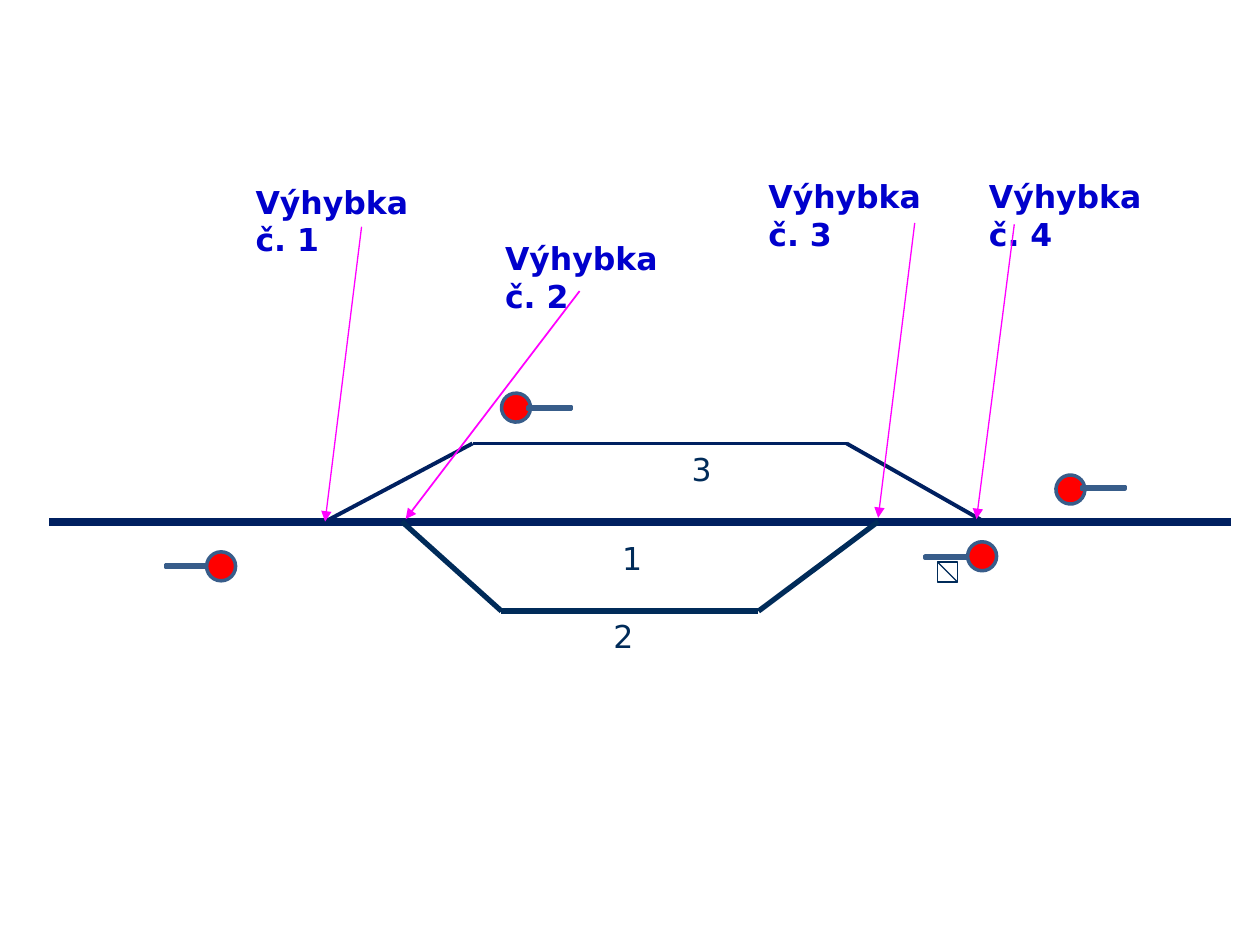
from itertools import pairwise

from lxml import etree
from pptx import Presentation
from pptx.dml.color import RGBColor
from pptx.enum.shapes import MSO_CONNECTOR, MSO_SHAPE
from pptx.enum.text import MSO_ANCHOR
from pptx.oxml.ns import qn
from pptx.util import Inches, Pt

STRAIGHT = MSO_CONNECTOR.STRAIGHT
LAMP = MSO_SHAPE.FLOWCHART_CONNECTOR
MAST = MSO_SHAPE.MATH_MINUS
SQUARE = MSO_SHAPE.RECTANGLE
TOP = MSO_ANCHOR.TOP

NAVY = RGBColor(0x00, 0x20, 0x60)
INK = RGBColor(0x00, 0x2B, 0x59)
LABEL_BLUE = RGBColor(0x00, 0x00, 0xCC)
MAGENTA = RGBColor(0xFF, 0x00, 0xFF)
RED = RGBColor(0xFF, 0x00, 0x00)
STEEL = RGBColor(0x4F, 0x81, 0xBD)
OUTLINE = RGBColor(0x38, 0x5D, 0x8A)
WHITE = RGBColor(0xFF, 0xFF, 0xFF)

SWITCH_FONT = {"name": "DejaVu Sans", "size": Pt(18), "bold": True}
TRACK_FONT = {"name": "DejaVu Sans", "size": Pt(18), "bold": False}


def add_line(slide, start, end, color, weight, arrow=False):
    line = slide.shapes.add_connector(
        STRAIGHT, *(Inches(value) for value in (*start, *end)))
    line.line.color.rgb = color
    line.line.width = Pt(weight)
    if arrow:
        outline = line.line._get_or_add_ln()
        etree.SubElement(outline, qn("a:tailEnd"), type="triangle")
    etree.SubElement(line._element.spPr, qn("a:effectLst"))


def add_figure(slide, kind, box, fill, outline, weight, rotation=0):
    figure = slide.shapes.add_shape(kind, *(Inches(value) for value in box))
    figure.shadow.inherit = False
    figure.fill.solid()
    figure.fill.fore_color.rgb = fill
    figure.line.color.rgb = outline
    figure.line.width = Pt(weight)
    figure.rotation = rotation


def add_label(slide, box, lines, font_format, color):
    label = slide.shapes.add_textbox(*(Inches(value) for value in box))
    frame = label.text_frame
    frame.word_wrap = True
    frame.vertical_anchor = TOP
    frame.text = "\n".join(lines)
    for paragraph in frame.paragraphs:
        for key, value in font_format.items():
            setattr(paragraph.font, key, value)
        paragraph.font.color.rgb = color


def add_track(slide, left, top, points, color, weight):
    """Chain of straight sections; points are relative to left and top."""
    placed = [(left + x, top + y) for x, y in points]
    for start, end in pairwise(placed):
        add_line(slide, start, end, color, weight)


def add_signal(slide, left, top, mast_dx, mast_dy, rotation=0):
    """Lamp at left and top, with its mast offset from there."""
    parts = [
        (MAST, (left + mast_dx, top + mast_dy, 0.47, 0.08), STEEL, OUTLINE, 2),
        (LAMP, (left, top, 0.23, 0.23), RED, OUTLINE, 2, rotation),
    ]
    if mast_dx > 0:  # a mast on the right lies over its lamp
        parts.reverse()
    for part in parts:
        add_figure(slide, *part)


def add_crossed_square(slide, left, top, side):
    add_figure(slide, SQUARE, (left, top, side, side), WHITE, INK, 0.75)
    add_line(slide, (left + side, top + side), (left, top), INK, 0.75)


def add_switch(slide, left, top, width, lines, arrow_from, arrow_to, weight):
    """Switch label; arrow ends are relative to its left and top."""
    add_label(slide, (left, top, width, 0.4), lines, SWITCH_FONT, LABEL_BLUE)
    start, end = [(left + x, top + y) for x, y in (arrow_from, arrow_to)]
    add_line(slide, start, end, MAGENTA, weight, arrow=True)


def add_station(slide, left, top):
    """Tracks and their numbers; the main track starts at left and top."""
    # Main track 1 and upper loop 3
    add_track(slide, left, top, [(0, 0), (9.38, 0)], NAVY, 4.5)
    add_track(slide, left, top,
              [(2.19, 0), (3.36, -0.62), (6.33, -0.62), (7.42, 0)], NAVY, 2.25)
    # Lower loop 2
    add_track(slide, left, top,
              [(2.8, 0), (3.59, 0.71), (5.63, 0.71), (6.58, 0)], INK, 3)
    # Track numbers
    for number, x, y, width in [("1", 4.45, 0.09, 0.24),
                                ("2", 4.38, 0.71, 0.49),
                                ("3", 5, -0.62, 0.39)]:
        add_label(slide, (left + x, top + y, width, 0.4), [number],
                  TRACK_FONT, INK)


def main():
    prs = Presentation()
    prs.slide_width, prs.slide_height = Inches(10), Inches(7.5)
    slide = prs.slides.add_slide(prs.slide_layouts[6])

    add_station(slide, 0.39, 4.14)

    # Signals
    for signal in [(1.64, 4.38, -0.39, 0.07),
                   (7.68, 4.3, -0.4, 0.08),
                   (8.38, 3.77, 0.14, 0.06, 169),
                   (3.98, 3.12, 0.15, 0.08, 169)]:
        add_signal(slide, *signal)
    add_crossed_square(slide, 7.44, 4.46, 0.16)

    # Switches
    for switch in [
        (1.93, 1.4, 1.89, ["Výhybka", "č. 1"], (0.94, 0.4), (0.65, 2.74), 0.75),
        (3.91, 1.85, 1.68, ["Výhybka č. 2"], (0.69, 0.46), (-0.69, 2.27), 1),
        (6, 1.36, 1.68, ["Výhybka č. 3"], (1.26, 0.41), (0.97, 2.75), 0.75),
        (7.75, 1.36, 1.68, ["Výhybka č. 4"], (0.3, 0.42), (0, 2.76), 0.75),
    ]:
        add_switch(slide, *switch)

    prs.save("out.pptx")


if __name__ == "__main__":
    main()
